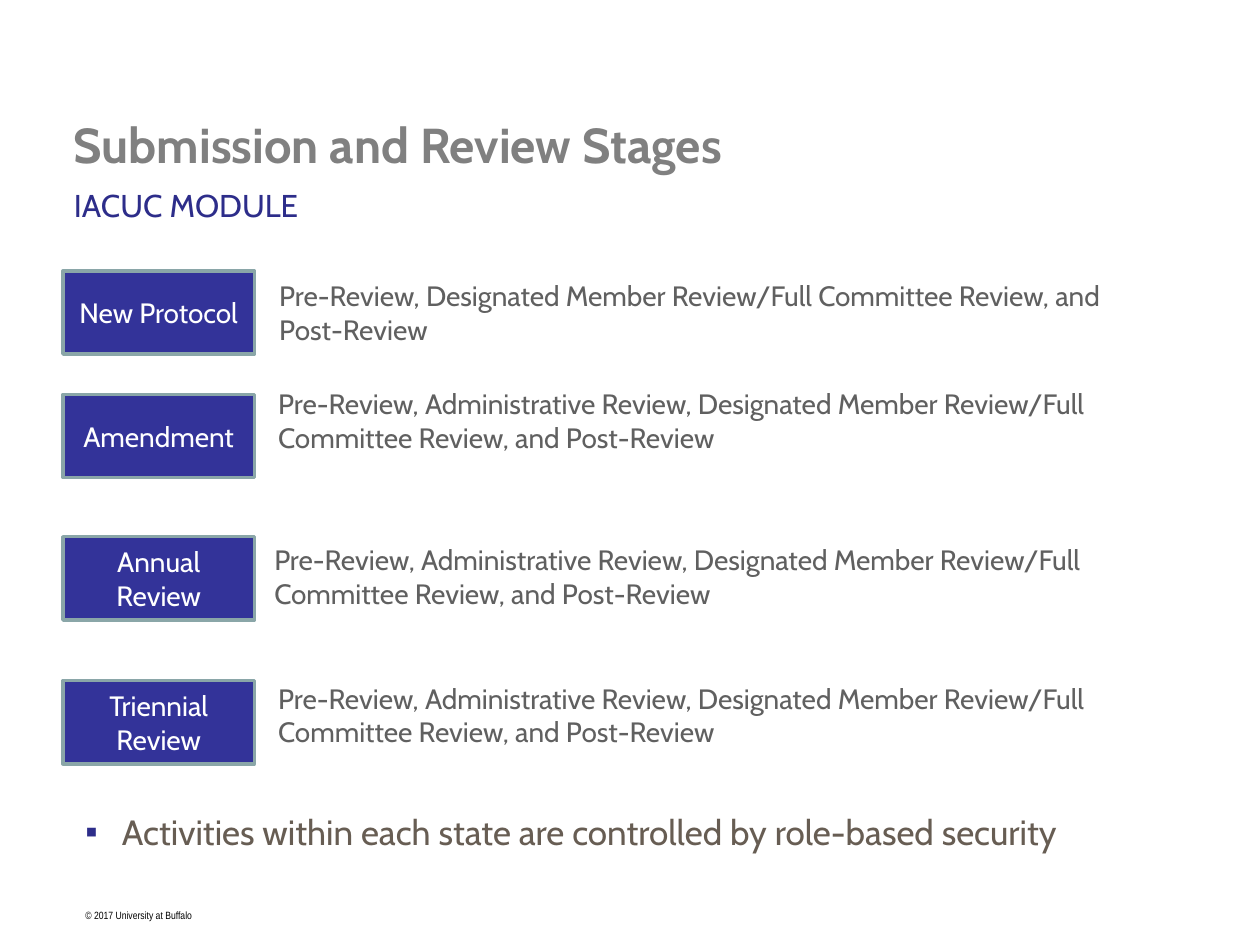
from pptx import Presentation
from pptx.dml.color import RGBColor
from pptx.enum.shapes import MSO_SHAPE as Shape
from pptx.enum.text import MSO_ANCHOR as Anchor, PP_ALIGN as Align
from pptx.oxml import parse_xml
from pptx.oxml.ns import nsdecls
from pptx.util import Cm, Pt

BLUE = "2D2D8A"
FULL_REVIEW = ("Pre-Review, Administrative Review, Designated Member Review/"
               "Full Committee Review, and Post-Review")
STAGES = [
    ("New Protocol", 5.46, (5.38, 5.49, 17.27, 1.68),
     "Pre-Review, Designated Member Review/Full Committee Review, and Post-Review"),
    ("Amendment", 7.95, (5.36, 7.67, 18.14, 1.78), FULL_REVIEW),
    ("Annual Review", 10.82, (5.28, 10.82, 19.28, 2.82), FULL_REVIEW),
    ("Triennial Review", 13.72, (5.36, 13.61, 18.57, 2.06), FULL_REVIEW),
]


def color(value):
    return RGBColor.from_string(value)


class StageSlide:
    """Adds styled text, stage labels and bullets to one slide."""

    font_name = "Cabin"
    label_size = 16

    def __init__(self, slide):
        self.slide = slide

    def format(self, paragraph, size, hex_color, bold=False, font_name=None):
        font = paragraph.runs[0].font
        font.name = font_name or self.font_name
        font.size = Pt(size)
        font.bold = bold
        font.color.rgb = color(hex_color)

    def text(self, box, text, size, hex_color, wrap=True, **style):
        shape = self.slide.shapes.add_textbox(*map(Cm, box))
        shape.text_frame.word_wrap = wrap
        shape.text_frame.text = text
        paragraph = shape.text_frame.paragraphs[0]
        self.format(paragraph, size, hex_color, **style)
        return paragraph

    def bullet(self, box, text, size, hex_color):
        paragraph = self.text(box, text, size, hex_color)
        properties = paragraph._p.get_or_add_pPr()
        properties.set("marL", str(Cm(0.74)))
        properties.set("indent", str(-Cm(0.74)))
        for xml in (f'<a:buClr {nsdecls("a")}><a:srgbClr val="{BLUE}"/></a:buClr>',
                    f'<a:buFont {nsdecls("a")} typeface="Arial"/>',
                    f'<a:buChar {nsdecls("a")} char="▪"/>'):
            properties.append(parse_xml(xml))

    def label(self, top, text):
        shape = self.slide.shapes.add_shape(
            Shape.RECTANGLE, Cm(1.27), Cm(top), Cm(3.86), Cm(1.68))
        shape.shadow.inherit = False
        shape.fill.solid()
        shape.fill.fore_color.rgb = color("333399")
        shape.line.color.rgb = color("8AA6A8")
        shape.line.width = Pt(2)
        frame = shape.text_frame
        frame.word_wrap = True
        frame.vertical_anchor = Anchor.MIDDLE
        frame.text = text
        frame.paragraphs[0].alignment = Align.CENTER
        self.format(frame.paragraphs[0], self.label_size, "FFFFFF")


def main():
    presentation = Presentation()
    presentation.slide_width, presentation.slide_height = Cm(25.4), Cm(19.05)
    page = StageSlide(presentation.slides.add_slide(presentation.slide_layouts[6]))
    page.text((1.47, 18.21, 2.69, 0.51), "© 2017 University at Buffalo", 6, "000000",
              wrap=False, font_name="Arial Narrow")
    page.text((1.24, 2.18, 17.91, 1.42), "Submission and Review Stages", 28, "808080",
              bold=True)
    page.text((1.24, 3.63, 17.88, 1.27), "IACUC MODULE", 18, BLUE)
    for name, top, box, description in STAGES:
        page.label(top, name)
        page.text(box, description, page.label_size, "606060")
    page.bullet((1.47, 16.21, 23.37, 1.8),
                "Activities within each state are controlled by role-based security",
                20, "675D53")
    presentation.save("out.pptx")


if __name__ == "__main__":
    main()
